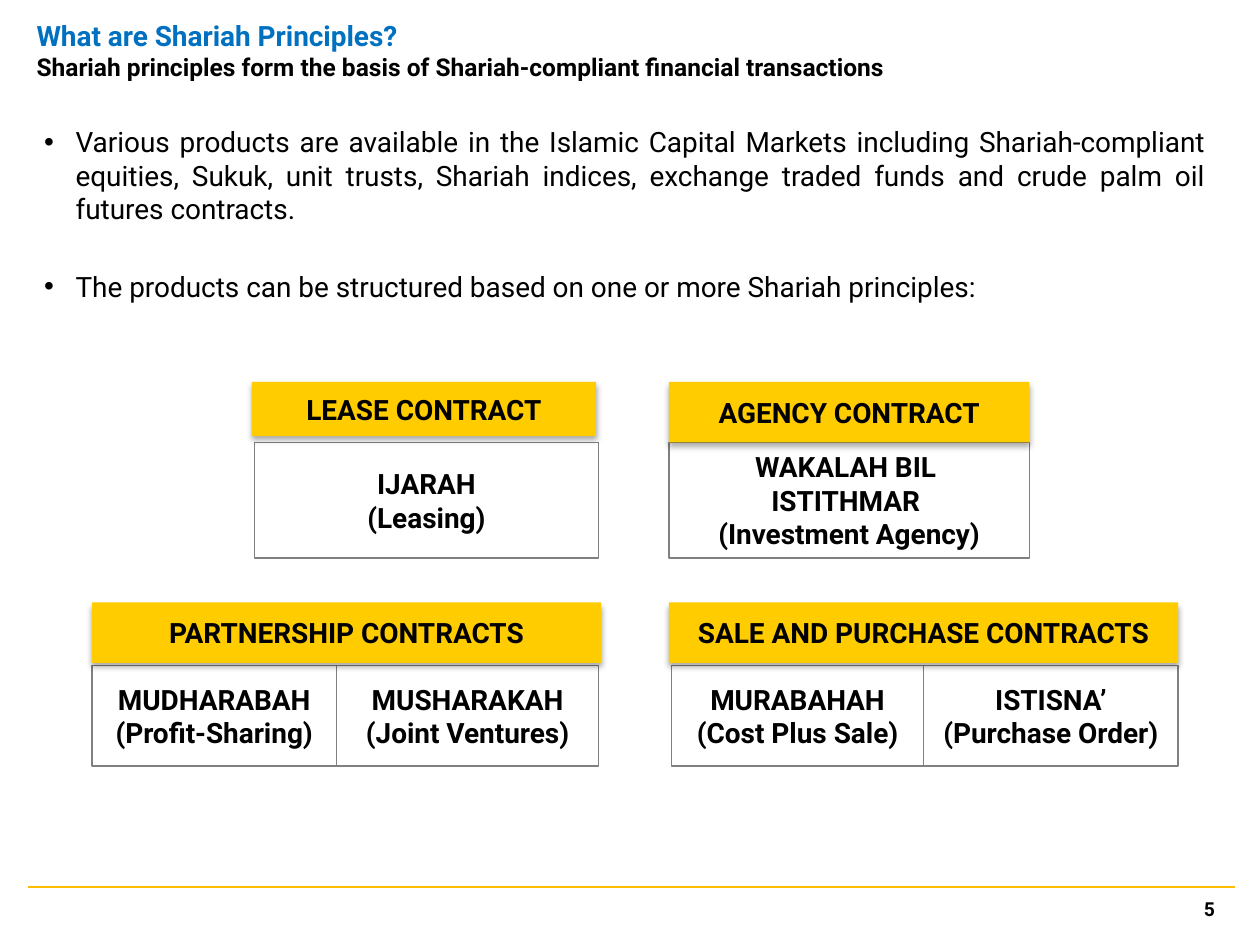
from dataclasses import dataclass

from lxml.etree import SubElement
from pptx import Presentation
from pptx.dml.color import RGBColor
from pptx.enum.shapes import MSO_CONNECTOR, MSO_SHAPE
from pptx.enum.text import MSO_ANCHOR, MSO_AUTO_SIZE, PP_ALIGN
from pptx.oxml.ns import qn
from pptx.util import Pt


@dataclass(frozen=True)
class Theme:
    font: str = "Roboto"
    heading: RGBColor = RGBColor(0x00, 0x70, 0xC0)
    ink: RGBColor = RGBColor(0x00, 0x00, 0x00)
    banner: RGBColor = RGBColor(0xFF, 0xCC, 0x00)
    rule: RGBColor = RGBColor(0xFF, 0xBC, 0x00)
    border: RGBColor = RGBColor(0x80, 0x80, 0x80)
    body_size: int = 16
    subtitle_size: int = 14
    number_size: int = 11


THEME = Theme()

BULLETS = [
    "Various products are available in the Islamic Capital Markets including "
    "Shariah-compliant equities, Sukuk, unit trusts, Shariah indices, exchange "
    "traded funds and crude palm oil futures contracts. ",
    "The products can be structured based on one or more Shariah principles:",
]

# Each family: banner text, banner box, top left and height of its cells,
# then (width, lines) for each principle
CONTRACTS = [
    ("LEASE CONTRACT", (144, 218.2, 196.6, 31), (145.4, 252.7, 66.2),
     [(196.6, ["IJARAH", "(Leasing)"])]),
    ("AGENCY CONTRACT", (382.3, 218.2, 205.9, 34.6), (382.3, 252.7, 66.2),
     [(205.9, ["WAKALAH BIL ", "ISTITHMAR ", "(Investment Agency)"])]),
    ("PARTNERSHIP CONTRACTS", (52.6, 344.2, 290.9, 34.6), (52.6, 380.2, 57.6),
     [(139.7, ["MUDHARABAH", "(Profit-Sharing)"]),
      (149.8, ["MUSHARAKAH", "(Joint Ventures)"])]),
    ("SALE AND PURCHASE CONTRACTS", (382.3, 344.2, 290.9, 34.6), (383.8, 380.2, 57.6),
     [(144, ["MURABAHAH", "(Cost Plus Sale)"]),
      (145.4, ["ISTISNA’", "(Purchase Order)"])]),
]


def write(frame, text, *, first=False, size=THEME.body_size, color=THEME.ink,
          bold=False, align=PP_ALIGN.LEFT, before=0, bullet=False):
    """Write one paragraph into a text frame."""
    paragraph = frame.paragraphs[0] if first else frame.add_paragraph()
    if bullet:
        properties = paragraph._p.get_or_add_pPr()
        properties.set("marL", str(Pt(18)))
        properties.set("indent", str(-Pt(18)))
        SubElement(properties, qn("a:buFont"), typeface="Arial")
        SubElement(properties, qn("a:buChar"), char="•")
    paragraph.alignment = align
    paragraph.space_before = Pt(before)
    run = paragraph.add_run()
    run.text = text
    run.font.name = THEME.font
    run.font.size = Pt(size)
    run.font.bold = bold
    run.font.color.rgb = color


def place(placeholder, left, top, width, height, anchor):
    placeholder.left, placeholder.top = Pt(left), Pt(top)
    placeholder.width, placeholder.height = Pt(width), Pt(height)
    frame = placeholder.text_frame
    frame.word_wrap = True
    frame.auto_size = MSO_AUTO_SIZE.NONE
    frame.vertical_anchor = anchor
    return frame


def add_box(slide, box, lines):
    """Add an unfilled, unshadowed rectangle with centred bold lines."""
    rectangle = slide.shapes.add_shape(MSO_SHAPE.RECTANGLE, *map(Pt, box))
    rectangle.shadow.inherit = False
    rectangle.fill.background()
    frame = rectangle.text_frame
    frame.word_wrap = False
    frame.vertical_anchor = MSO_ANCHOR.MIDDLE
    for index, line in enumerate(lines):
        write(frame, line, first=index == 0, bold=True, align=PP_ALIGN.CENTER)
    return rectangle


def add_principle(slide, box, lines):
    cell = add_box(slide, box, lines)
    cell.line.color.rgb = THEME.border
    cell.line.width = Pt(0.75)


def add_banner(slide, box, text):
    banner = add_box(slide, box, [text])
    banner.fill.solid()
    banner.fill.fore_color.rgb = THEME.banner
    banner.line.fill.background()
    effects = banner._element.spPr.find(qn("a:effectLst"))
    shadow = SubElement(effects, qn("a:outerShdw"), blurRad=str(Pt(3.5)),
                        dist=str(Pt(2.2)), dir="5400000", rotWithShape="0")
    shade = SubElement(shadow, qn("a:srgbClr"), val="000000")
    SubElement(shade, qn("a:alpha"), val="32000")


def add_contract(slide, title, banner_box, cells, principles):
    left, top, height = cells
    for width, lines in principles:
        add_principle(slide, (left, top, width, height), lines)
        left += width
    add_banner(slide, banner_box, title)


def add_footer(slide, number):
    rule = slide.shapes.add_connector(
        MSO_CONNECTOR.STRAIGHT, Pt(15.8), Pt(506.9), Pt(705.6), Pt(506.9))
    rule.line.color.rgb = THEME.rule
    rule.line.width = Pt(1.5)
    SubElement(rule._element.spPr, qn("a:effectLst"))
    page = slide.shapes.add_textbox(Pt(533.5), Pt(504.7), Pt(167.8), Pt(28.8))
    frame = page.text_frame
    frame.word_wrap = True
    frame.vertical_anchor = MSO_ANCHOR.MIDDLE
    write(frame, number, first=True, size=THEME.number_size, bold=True,
          align=PP_ALIGN.RIGHT)


def main():
    deck = Presentation()
    deck.slide_width, deck.slide_height = Pt(720), Pt(540)
    slide = deck.slides.add_slide(deck.slide_layouts[1])

    # Heading
    heading = place(slide.shapes.title, 20.9, 3.6, 532.8, 50.4, MSO_ANCHOR.MIDDLE)
    heading.margin_left = heading.margin_right = 0
    heading.margin_top = heading.margin_bottom = 0
    write(heading, "What are Shariah Principles?", first=True,
          color=THEME.heading, bold=True)
    write(heading, "Shariah principles form the basis of Shariah-compliant "
          "financial transactions", size=THEME.subtitle_size, bold=True)

    # Introduction
    intro = place(slide.placeholders[1], 18, 67.7, 678.2, 135.4, MSO_ANCHOR.TOP)
    for index, text in enumerate(BULLETS):
        write(intro, text, first=index == 0, align=PP_ALIGN.JUSTIFY,
              before=25 if index else 0, bullet=True)

    # Contract families
    for contract in CONTRACTS:
        add_contract(slide, *contract)

    # Footer
    add_footer(slide, "5")
    deck.save("out.pptx")


if __name__ == "__main__":
    main()
